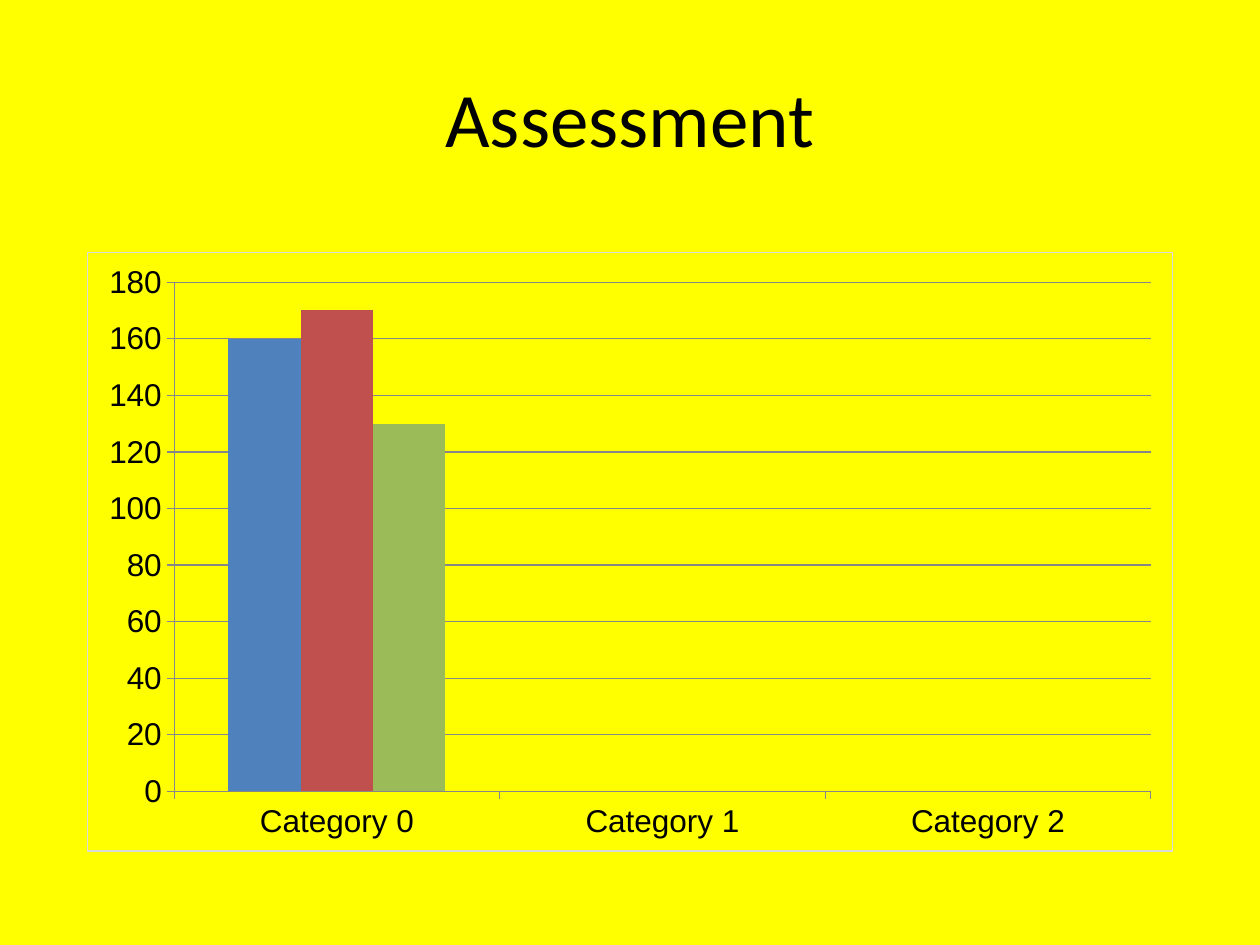
from lxml import etree
from pptx import Presentation
from pptx import util as u
from pptx.chart import data
from pptx.dml import color
from pptx.enum import chart as chart_enum, text
from pptx.oxml import ns


def rgb(value):
    return color.RGBColor.from_string(value)


presentation = Presentation()
presentation.slide_width = u.Inches(10)
presentation.slide_height = u.Inches(7.5)
slide = presentation.slides.add_slide(presentation.slide_layouts[6])
slide.background.fill.solid()
slide.background.fill.fore_color.rgb = rgb("FFFF00")

# Title
title = slide.shapes.add_textbox(u.Inches(0.5), u.Inches(0.3), u.Inches(9), u.Inches(1.25))
title.text_frame.word_wrap = True
title.text_frame.vertical_anchor = text.MSO_ANCHOR.MIDDLE
paragraph = title.text_frame.paragraphs[0]
paragraph.text = "Assessment"
paragraph.alignment = text.PP_ALIGN.CENTER
paragraph.font.name = "Calibri"
paragraph.font.size = u.Pt(44)
paragraph.font.color.rgb = rgb("000000")

# Column chart: only the first category has values
series_styles = [(160, "4F81BD"), (170, "C0504D"), (130, "9BBB59")]
chart_data = data.CategoryChartData()
chart_data.categories = ["Category 0", "Category 1", "Category 2"]
for number, (value, fill) in enumerate(series_styles, 1):
    chart_data.add_series(f"Series {number}", [value, None, None])
chart = slide.shapes.add_chart(
    chart_enum.XL_CHART_TYPE.COLUMN_CLUSTERED,
    u.Inches(0.69), u.Inches(2), u.Inches(8.62), u.Inches(4.76), chart_data,
).chart
chart.has_title = False
chart.has_legend = False
chart.font.name = "Arial"
chart.font.size = u.Pt(10)
chart.font.color.rgb = rgb("000000")

plot = chart.plots[0]
plot.gap_width = 150
plot.overlap = 0
plot.vary_by_categories = False
for series, (value, fill) in zip(plot.series, series_styles):
    series.format.fill.solid()
    series.format.fill.fore_color.rgb = rgb(fill)

# Axes and gridlines
value_axis = chart.value_axis
value_axis.minimum_scale = 0
value_axis.maximum_scale = 180
value_axis.major_unit = 20
value_axis.has_major_gridlines = True
for axis in (chart.category_axis, value_axis):
    axis.major_tick_mark = chart_enum.XL_TICK_MARK.OUTSIDE
    axis.minor_tick_mark = chart_enum.XL_TICK_MARK.NONE
    axis.tick_labels.font.name = "Arial"
    axis.tick_labels.font.size = u.Pt(18)
    axis.tick_labels.font.color.rgb = rgb("000000")
for part in (chart.category_axis, value_axis, value_axis.major_gridlines):
    part.format.line.color.rgb = rgb("878787")
    part.format.line.width = u.Pt(0.75)

# Chart border, with no fill behind the plot
border = etree.fromstring(
    f'<c:spPr {ns.nsdecls("c", "a")}><a:noFill/><a:ln w="{u.Pt(0.75)}">'
    '<a:solidFill><a:srgbClr val="D9D9D9"/></a:solidFill></a:ln></c:spPr>'
)
chart.element.find(ns.qn("c:chart")).addnext(border)

presentation.save("out.pptx")
